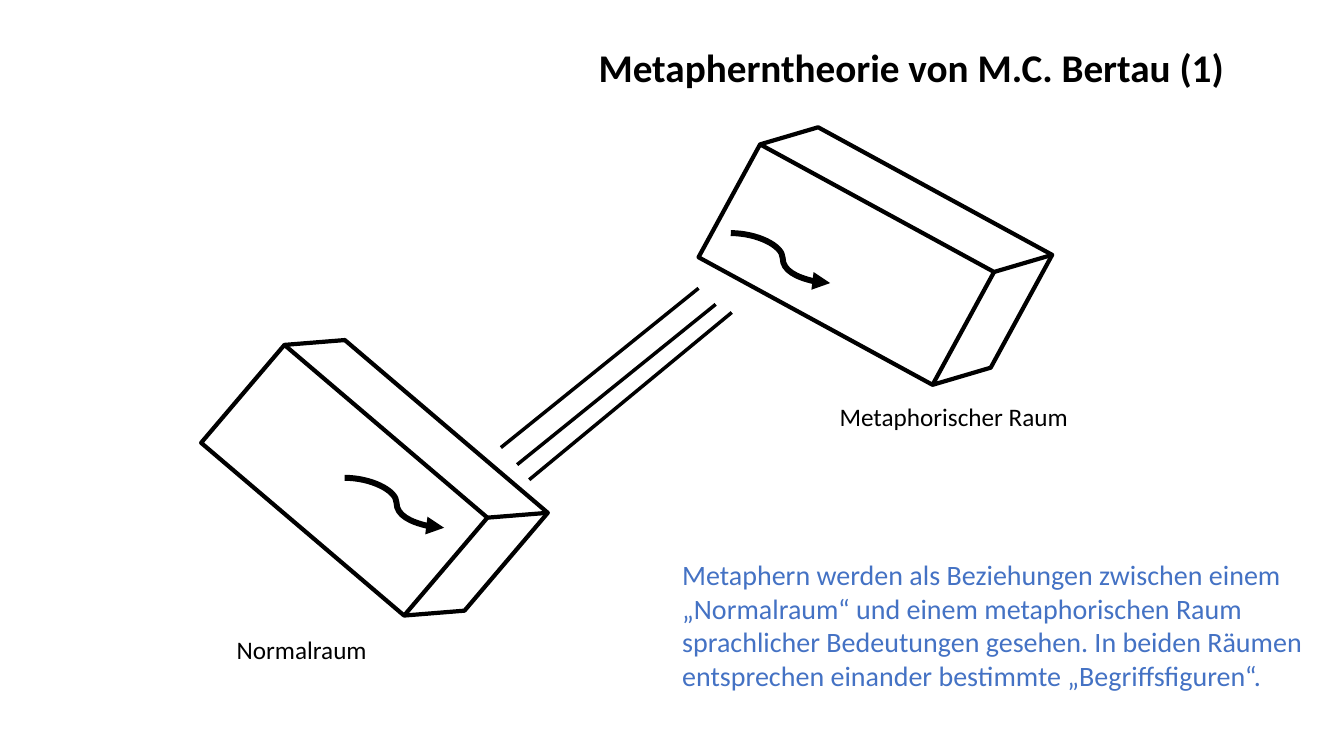
from lxml.etree import SubElement
from pptx import Presentation
from pptx.dml.color import RGBColor
from pptx.enum.shapes import MSO_CONNECTOR, MSO_SHAPE
from pptx.oxml.ns import qn
from pptx.util import Pt

COLORS = {"ink": "000000", "accent": "4472C4"}
FONT = "Calibri"
ROOM_SIZE = (221, 122.4)
FIGURE_SIZE = (71, 35.7)


def add_text(slide, box, wording, size, color="ink", bold=False):
    """Place one wrapped paragraph in the box."""
    frame = slide.shapes.add_textbox(*map(Pt, box)).text_frame
    frame.word_wrap = True
    run = frame.paragraphs[0].add_run()
    run.text = wording
    run.font.name = FONT
    run.font.size = Pt(size)
    run.font.bold = bold
    run.font.color.rgb = RGBColor.from_string(COLORS[color])


def add_line(slide, kind, start, end, width):
    """Draw a plain connector from start to end."""
    line = slide.shapes.add_connector(kind, *map(Pt, (*start, *end)))
    line.line.color.rgb = RGBColor.from_string(COLORS["ink"])
    line.line.width = Pt(width)
    SubElement(line._element.spPr, qn("a:effectLst"))
    return line


def add_concept_figure(slide, left, top):
    """Draw the curved arrow that stands for a concept figure."""
    width, height = FIGURE_SIZE
    figure = add_line(slide, MSO_CONNECTOR.CURVE, (left, top), (left + width, top + height), 4.25)
    SubElement(figure.line._get_or_add_ln(), qn("a:tailEnd"), type="triangle")
    bends = figure._element.spPr.find(qn("a:prstGeom")).get_or_add_avLst()
    SubElement(bends, qn("a:gd"), name="adj1", fmla="val 52200")


def add_room(slide, left, top, rotation, figure_offset, label, label_box):
    """Draw a tilted room with its concept figure and label, both offset from its corner."""
    room = slide.shapes.add_shape(MSO_SHAPE.CUBE, *map(Pt, (left, top, *ROOM_SIZE)))
    room.rotation = rotation
    room.shadow.inherit = False
    room.fill.background()
    room.line.color.rgb = RGBColor.from_string(COLORS["ink"])
    room.line.width = Pt(3)
    add_concept_figure(slide, left + figure_offset[0], top + figure_offset[1])
    dx, dy, width, height = label_box
    add_text(slide, (left + dx, top + dy, width, height), label, 18)


def add_relations(slide, left, top):
    """Draw the three lines that relate the two rooms."""
    relations = [
        ((0, 113.8), (141.2, 0)),
        ((11.6, 126), (153.4, 11.5)),
        ((20.2, 136.8), (164.9, 17.3)),
    ]
    for (x1, y1), (x2, y2) in relations:
        add_line(slide, MSO_CONNECTOR.STRAIGHT,
                 (left + x1, top + y1), (left + x2, top + y2), 2.5)


def main():
    """Build the slide and save it."""
    deck = Presentation()
    deck.slide_width, deck.slide_height = Pt(960), Pt(540)
    slide = deck.slides.add_slide(deck.slide_layouts[6])
    add_text(slide, (420.5, 27.4, 491, 41), "Metapherntheorie von M.C. Bertau (1)", 28, bold=True)
    add_room(slide, 157, 280.1, 40.4, (89.2, 61.2), "Normalraum", (5, 169.2, 266.4, 29))
    add_room(slide, 514.8, 121.7, 28.6, (7.2, 44.8), "Metaphorischer Raum", (77.8, 161.3, 224, 29))
    add_relations(slide, 357.8, 205.9)
    add_text(
        slide, (480.2, 394.6, 460, 104.4),
        "Metaphern werden als Beziehungen zwischen einem „Normalraum“ und einem "
        "metaphorischen Raum sprachlicher Bedeutungen gesehen. In beiden Räumen "
        "entsprechen einander bestimmte „Begriffsfiguren“.",
        20, "accent")
    deck.save("out.pptx")


if __name__ == "__main__":
    main()
